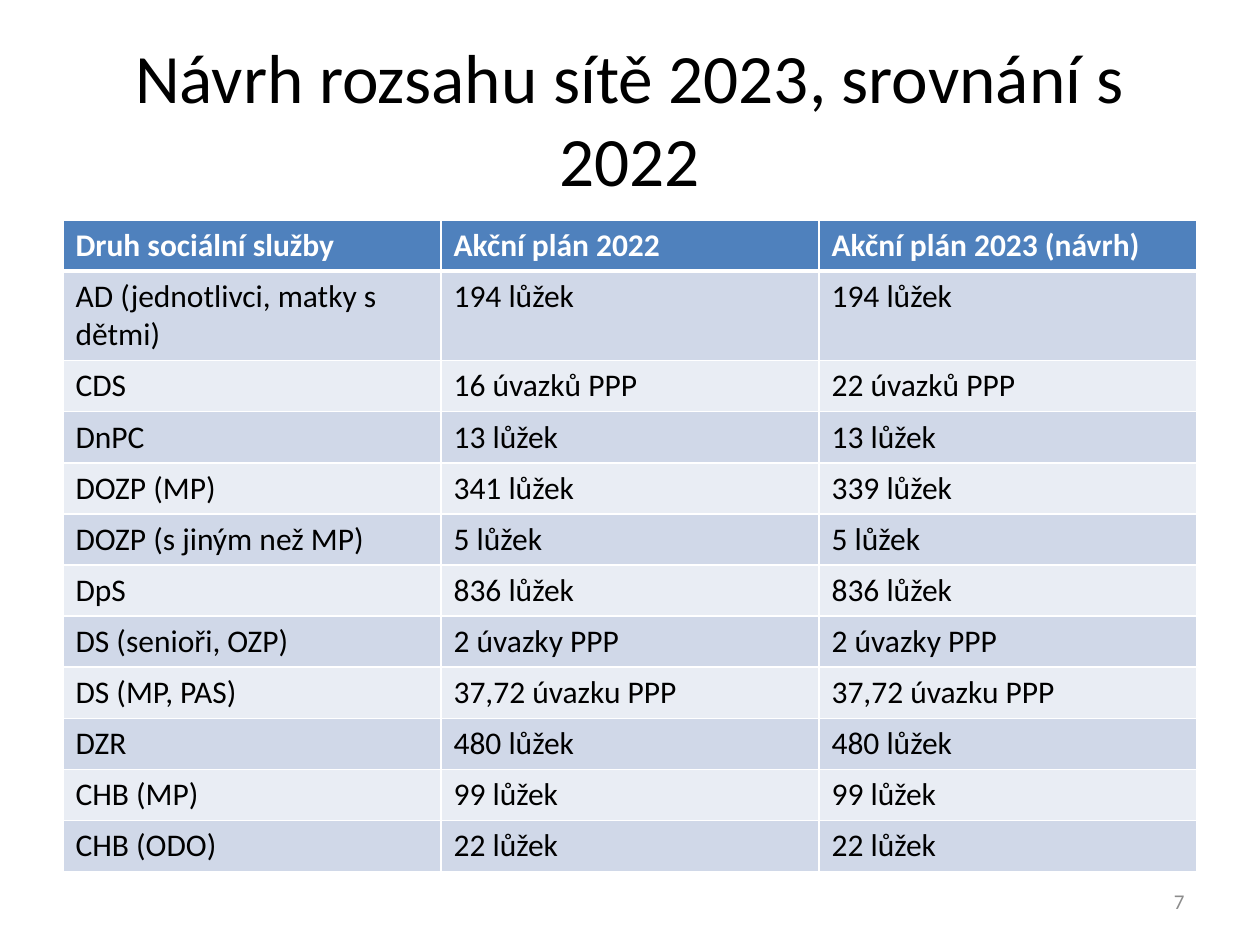
from pptx import Presentation
from pptx.dml.color import RGBColor
from pptx.enum.text import MSO_ANCHOR, MSO_AUTO_SIZE, PP_ALIGN
from pptx.oxml import parse_xml
from pptx.oxml.ns import nsdecls
from pptx.util import Pt

SCALE = 914400 / 126
COLORS = {
    "text": "000000",
    "white": "FFFFFF",
    "head": "4F81BD",
    "odd": "D0D8E8",
    "even": "E9EDF4",
    "page": "8C8C8C",
}
ROWS = [
    ("Druh sociální služby", "Akční plán 2022", "Akční plán 2023 (návrh)"),
    ("AD (jednotlivci, matky s dětmi)", "194 lůžek", "194 lůžek"),
    ("CDS", "16 úvazků PPP", "22 úvazků PPP"),
    ("DnPC", "13 lůžek", "13 lůžek"),
    ("DOZP (MP)", "341 lůžek", "339 lůžek"),
    ("DOZP (s jiným než MP)", "5 lůžek", "5 lůžek"),
    ("DpS", "836 lůžek", "836 lůžek"),
    ("DS (senioři, OZP)", "2 úvazky PPP", "2 úvazky PPP"),
    ("DS (MP, PAS)", "37,72 úvazku PPP", "37,72 úvazku PPP"),
    ("DZR", "480 lůžek", "480 lůžek"),
    ("CHB (MP)", "99 lůžek", "99 lůžek"),
    ("CHB (ODO)", "22 lůžek", "22 lůžek"),
]


def px(*sizes):
    return [round(size * SCALE) for size in sizes]


def write(frame, text, size=18, color="text", bold=False,
          align=PP_ALIGN.LEFT, anchor=MSO_ANCHOR.TOP):
    frame.word_wrap = True
    frame.vertical_anchor = anchor
    para = frame.paragraphs[0]
    para.alignment = align
    run = para.add_run()
    run.text = text
    run.font.name = "Calibri"
    run.font.size = Pt(size)
    run.font.bold = bold
    run.font.color.rgb = RGBColor.from_string(COLORS[color])


deck = Presentation()
deck.slide_width, deck.slide_height = px(1260, 945)
slide = deck.slides.add_slide(deck.slide_layouts[5])

title = slide.shapes.title
title.left, title.top, title.width, title.height = px(63, 38, 1134, 158)
title.text_frame.auto_size = MSO_AUTO_SIZE.NONE
write(title.text_frame, "Návrh rozsahu sítě 2023, srovnání s 2022", size=39.6,
      align=PP_ALIGN.CENTER, anchor=MSO_ANCHOR.MIDDLE)

table = slide.shapes.add_table(len(ROWS), 3, *px(63, 220, 1134, 612)).table
for col in table.columns:
    col.width = px(378)[0]
for r, row in enumerate(ROWS):
    table.rows[r].height = px(51)[0]
    head = r == 0
    fill = "head" if head else "odd" if r % 2 else "even"
    for c, text in enumerate(row):
        cell = table.cell(r, c)
        write(cell.text_frame, text, color="white" if head else "text", bold=head)
        cell.fill.solid()
        cell.fill.fore_color.rgb = RGBColor.from_string(COLORS[fill])
        props = cell._tc.get_or_add_tcPr()
        for i, side in enumerate("LRTB"):
            thick = (head and side == "B") or (r == 1 and side == "T")
            props.insert(i, parse_xml(
                f'<a:ln{side} {nsdecls("a")} w="{Pt(3 if thick else 1)}">'
                f'<a:solidFill><a:srgbClr val="{COLORS["white"]}"/></a:solidFill>'
                f'</a:ln{side}>'))

page = slide.shapes.add_textbox(*px(903, 876, 294, 50))
write(page.text_frame, "7", size=12, color="page",
      align=PP_ALIGN.RIGHT, anchor=MSO_ANCHOR.MIDDLE)

deck.save("out.pptx")
